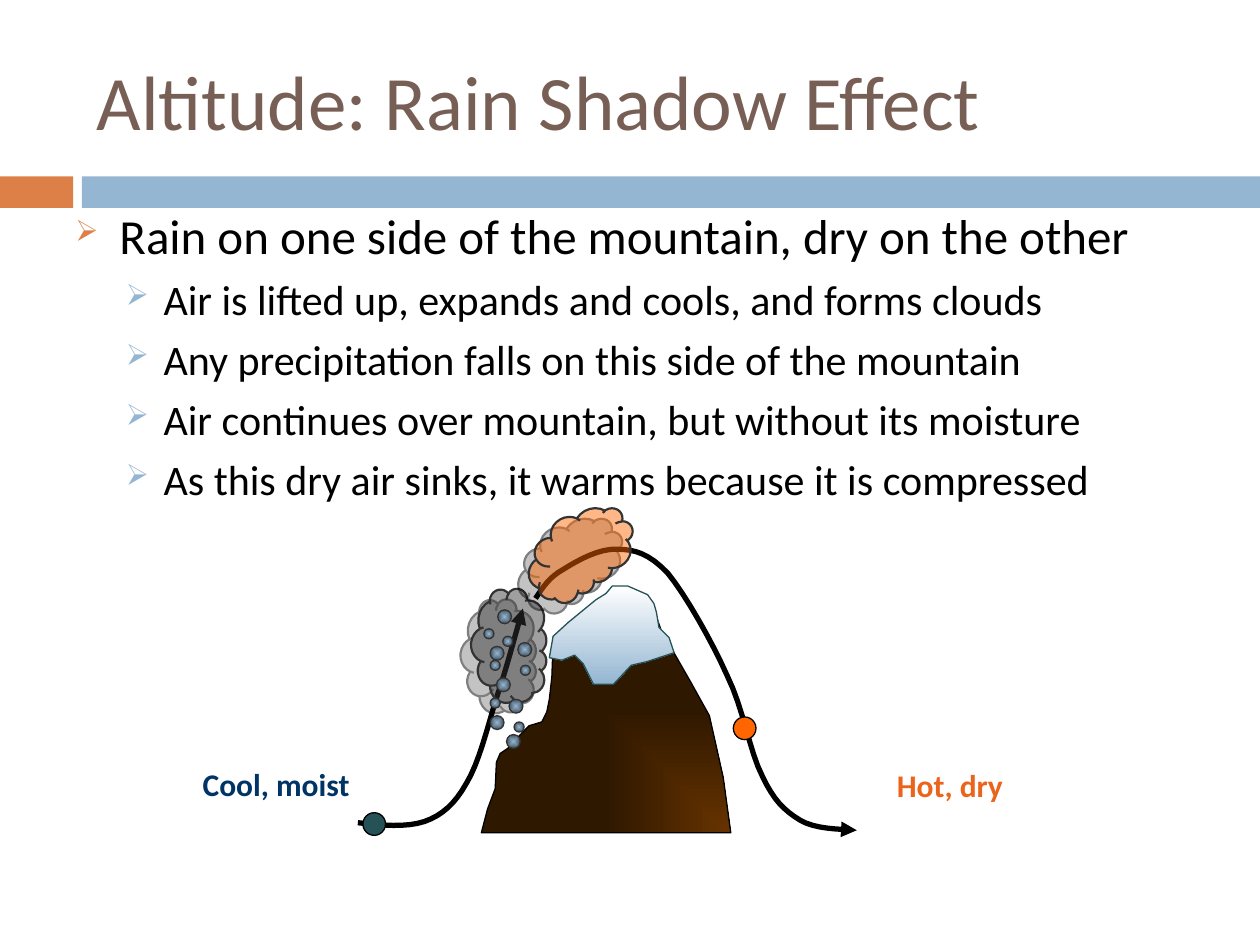
"""Build a slide on the rain shadow effect, with a mountain diagram."""
from lxml import etree
from pptx import Presentation
from pptx.dml.color import RGBColor
from pptx.enum.shapes import MSO_SHAPE
from pptx.enum.text import MSO_ANCHOR
from pptx.oxml import parse_xml
from pptx.oxml.ns import qn
from pptx.util import Inches, Pt

RECT, OVAL, CLOUD = MSO_SHAPE.RECTANGLE, MSO_SHAPE.OVAL, MSO_SHAPE.CLOUD
MIDDLE = MSO_ANCHOR.MIDDLE
FONT = "Calibri"
NS = 'xmlns:a="http://schemas.openxmlformats.org/drawingml/2006/main"'
COLORS = {
    "title": "775F55", "accent": "DD8047", "blue": "94B6D2", "black": "000000",
    "brown": "663300", "dark": "2F1800", "white": "FFFFFF", "teal": "245256",
    "gray": "333333", "drop": "42515E", "hot": "FF6600", "navy": "003366",
    "orange": "EB641B",
}
RGB = {name: RGBColor.from_string(code) for name, code in COLORS.items()}


def paint(shape, fill=None, line=None, width=0.75, focus=None):
    """Set fill (a name, a pair for a gradient, or None) and outline."""
    shape.shadow.inherit = False
    if fill is None:
        shape.fill.background()
    elif isinstance(fill, str):
        shape.fill.solid()
        shape.fill.fore_color.rgb = RGB[fill]
    else:
        shape.fill.gradient()
        shape.fill.gradient_angle = 270
        for stop, name, pos in zip(shape.fill.gradient_stops, fill, (0, 1)):
            stop.color.rgb = RGB[name]
            stop.position = pos
        if focus:
            lin = shape._element.spPr.find(".//" + qn("a:lin"))
            kind, left, top, right, bottom = focus
            lin.getparent().replace(lin, parse_xml(
                f'<a:path {NS} path="{kind}"><a:fillToRect l="{left}000" '
                f't="{top}000" r="{right}000" b="{bottom}000"/></a:path>'))
    if line:
        shape.line.color.rgb = RGB[line]
        shape.line.width = Pt(width)
    else:
        shape.line.fill.background()


def outline(points, close):
    """Draw a freeform through points given in inches."""
    spots = [(Inches(x), Inches(y)) for x, y in points]
    pen = slide.shapes.build_freeform(*spots[0])
    pen.add_line_segments(spots[1:], close=close)
    return pen.convert_to_shape()


prs = Presentation()
prs.slide_width, prs.slide_height = Inches(10), Inches(7.5)
slide = prs.slides.add_slide(prs.slide_layouts[6])
shapes = slide.shapes

for left, width, color in [(0, 0.58, "accent"), (0.65, 9.35, "blue")]:
    bar = shapes.add_shape(RECT, Inches(left), Inches(1.4), Inches(width), Inches(0.25))
    paint(bar, color)

for text, left, top, width, height, size, color, bold, wrap in [
    ("Altitude: Rain Shadow Effect", 0.67, 0.25, 8.92, 1.08, 44, "title", False, True),
    ("Cool, moist", 1.51, 6.02, 1.61, 0.4, 18, "navy", True, False),
    ("Hot, dry", 7.02, 6.03, 1.3, 0.4, 18, "orange", True, True),
]:
    box = shapes.add_textbox(Inches(left), Inches(top), Inches(width), Inches(height))
    frame = box.text_frame
    frame.word_wrap = wrap
    frame.vertical_anchor = MIDDLE
    para = frame.paragraphs[0]
    para.text = text
    para.font.name, para.font.size, para.font.bold = FONT, Pt(size), bold
    para.font.color.rgb = RGB[color]

body = shapes.add_textbox(Inches(0.5), Inches(1.58), Inches(9), Inches(5.25)).text_frame
body.word_wrap = True
points = [
    "Rain on one side of the mountain, dry on the other",
    "Air is lifted up, expands and cools, and forms clouds",
    "Any precipitation falls on this side of the mountain",
    "Air continues over mountain, but without its moisture",
    "As this dry air sinks, it warms because it is compressed",
]
for i, text in enumerate(points):
    para = body.add_paragraph() if i else body.paragraphs[0]
    para.text = text
    para.level = 1 if i else 0
    size, gap, left, hang, color, scale = (
        (24, 5.5, 0.7, 0.3, "blue", 70) if i else (28, 7, 0.35, 0.35, "accent", 60))
    para.space_before = Pt(gap)
    para.font.name, para.font.size = FONT, Pt(size)
    para.font.color.rgb = RGB["black"]
    props = para._p.get_or_add_pPr()
    props.set("marL", str(Inches(left)))
    props.set("indent", str(-Inches(hang)))
    marks = [
        f'<a:buClr {NS}><a:srgbClr val="{COLORS[color]}"/></a:buClr>',
        f'<a:buSzPct {NS} val="{scale}000"/>',
        f'<a:buChar {NS} char="➢"/>',
    ]
    spot = props.index(props.find(qn("a:spcBef"))) + 1
    for step, mark in enumerate(marks):
        props.insert(spot + step, parse_xml(mark))

rock = [
    (4.9, 4.67), (5.01, 4.69), (5.08, 4.71), (5.14, 4.78), (5.19, 4.84),
    (5.25, 5.01), (5.3, 5.07), (5.32, 5.13), (5.48, 5.41), (5.63, 5.68),
    (5.74, 6.17), (5.8, 6.61), (3.82, 6.61), (3.87, 6.42), (3.93, 6.26),
    (3.94, 6.05), (3.97, 5.98), (4.03, 5.94), (4.14, 5.82), (4.2, 5.76),
    (4.3, 5.73), (4.34, 5.65), (4.36, 5.55), (4.38, 5.37), (4.39, 5.09),
    (4.57, 4.92), (4.74, 4.79), (4.82, 4.7),
]
snow = [
    (4.98, 4.65), (5.14, 4.72), (5.19, 4.79), (5.21, 4.86), (5.23, 4.98),
    (5.31, 5.06), (5.35, 5.18), (5.14, 5.25), (5.01, 5.28), (4.87, 5.43),
    (4.71, 5.43), (4.63, 5.27), (4.56, 5.2), (4.46, 5.24), (4.36, 5.22),
    (4.39, 5.05), (4.51, 4.94), (4.73, 4.76), (4.81, 4.71), (4.86, 4.65),
]
paint(outline(rock, True), ("brown", "dark"), "black", focus=("rect", 100, 100, 0, 0))
paint(outline(snow, True), ("white", "blue"), "teal")

rise = [
    (2.84, 6.53), (3.03, 6.55), (3.22, 6.57), (3.37, 6.52), (3.51, 6.47),
    (3.61, 6.38), (3.7, 6.22), (3.8, 6.06), (3.87, 5.77), (3.94, 5.54),
    (4.02, 5.31), (4.08, 5.07), (4.15, 4.83),
]
fall = [
    (4.25, 4.75), (4.31, 4.66), (4.36, 4.58), (4.47, 4.52), (4.58, 4.45),
    (4.76, 4.35), (4.9, 4.36), (5.03, 4.36), (5.15, 4.39), (5.3, 4.55),
    (5.44, 4.72), (5.65, 5.09), (5.77, 5.36), (5.9, 5.62), (5.95, 5.97),
    (6.05, 6.16), (6.14, 6.35), (6.22, 6.43), (6.35, 6.51), (6.47, 6.58),
    (6.64, 6.58), (6.8, 6.59),
]
big = [(3.89, 5.13), (3.95, 4.84), (4.11, 5.1), (3.94, 5.38), (4.04, 5.55),
       (3.89, 5.68), (4.02, 5.83)]
small = [(4.13, 5.28), (3.99, 5.05), (3.89, 5.54), (4.08, 5.73), (3.89, 5.24),
         (3.84, 4.99)]
rain = [(x, y, 0.11) for x, y in big] + [(x, y, 0.08) for x, y in small]

for knots, dot, cloud, turn, tint, drops in [
    (rise, (2.88, 6.45, "teal"), (3.59, 4.82), 96.2, "gray", rain),
    (fall, (5.82, 5.69, "hot"), (4.15, 4.08), 150.9, "hot", []),
]:
    track = [knots[0]]
    for k in range(0, len(knots) - 1, 3):
        for t in (n / 8 for n in range(1, 9)):
            parts = ((1 - t) ** 3, 3 * t * (1 - t) ** 2, 3 * t * t * (1 - t), t ** 3)
            track.append(tuple(sum(w * p[axis] for w, p in zip(parts, knots[k:k + 4]))
                               for axis in (0, 1)))
    wind = outline(track, False)
    paint(wind, None, "black", 3)
    etree.SubElement(wind.line._get_or_add_ln(), qn("a:tailEnd"), type="triangle")

    x, y, color = dot
    ball = shapes.add_shape(OVAL, Inches(x), Inches(y), Inches(0.18), Inches(0.18))
    paint(ball, color, "black")

    x, y = cloud
    puff = shapes.add_shape(CLOUD, Inches(x), Inches(y), Inches(0.91), Inches(0.61))
    puff.rotation = turn
    paint(puff, tint, "gray", 1.25)
    props = puff._element.spPr
    etree.SubElement(props.find(qn("a:solidFill"))[0], qn("a:alpha"), val="47000")
    props.find(qn("a:effectLst")).append(parse_xml(
        f'<a:outerShdw {NS} dist="{Pt(8.5)}" dir="8100000" rotWithShape="0">'
        f'<a:srgbClr val="{COLORS["black"]}"><a:alpha val="50000"/></a:srgbClr>'
        '</a:outerShdw>'))

    for x, y, size in drops:
        drop = shapes.add_shape(OVAL, Inches(x), Inches(y), Inches(size), Inches(size))
        paint(drop, ("blue", "drop"), "gray", focus=("shape", 50, 50, 50, 50))

prs.save("out.pptx")
